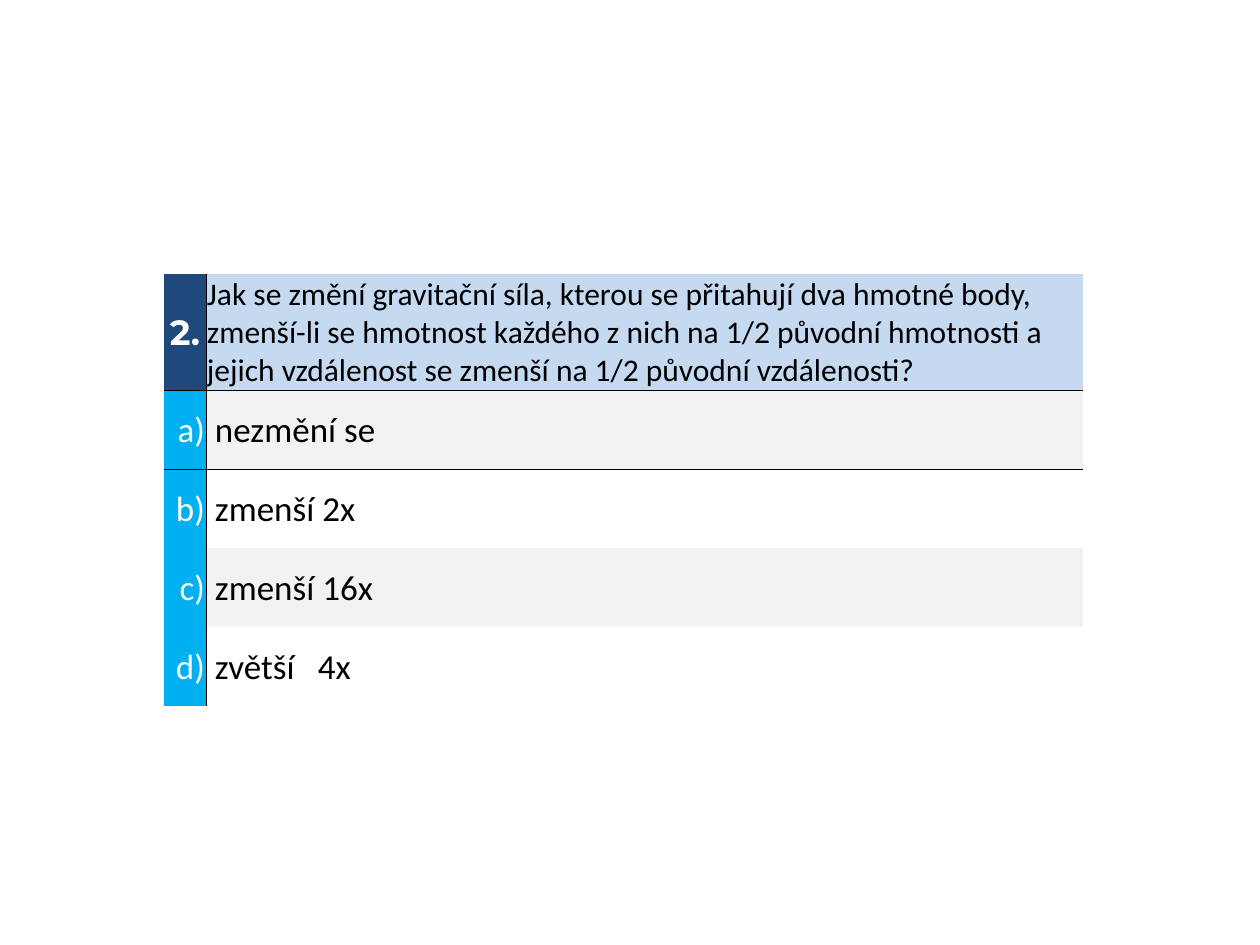
from lxml.etree import SubElement as Sub
from pptx import Presentation
from pptx.dml.color import RGBColor as Rgb
from pptx.enum.text import MSO_ANCHOR as Anchor, PP_ALIGN as Align
from pptx.oxml.ns import qn
from pptx.util import Pt

PX = 914400 // 126
THEME = {
    "navy": "1F497D", "pale": "C5D9F1", "cyan": "00B0F0", "gray": "F2F2F2",
    "white": "FFFFFF", "black": "000000",
    "body": "Calibri", "head": "Montserrat",
    "big": 20, "small": 18, "line": 0.5,
}


def border(cell, sides):
    """Draw thin lines on the given sides, in L, R, T, B order."""
    props = cell._tc.get_or_add_tcPr()
    for side in sides:
        line = Sub(props, qn("a:ln" + side), w=str(Pt(THEME["line"])))
        fill = Sub(line, qn("a:solidFill"))
        Sub(fill, qn("a:srgbClr"), val=THEME["black"])


def write(cell, text, ink, size, font, align, fill=None, bold=False, left=1, tab=0):
    """Fill one cell and format its text."""
    form = {"margin_left": left * PX, "margin_right": PX, "margin_top": PX,
            "margin_bottom": 0, "vertical_anchor": Anchor.MIDDLE}
    for key, val in form.items():
        setattr(cell, key, val)
    if fill:
        cell.fill.solid()
        cell.fill.fore_color.rgb = Rgb.from_string(THEME[fill])
    else:
        cell.fill.background()
    para = cell.text_frame.paragraphs[0]
    para.alignment = align
    if tab:
        stops = Sub(para._p.get_or_add_pPr(), qn("a:tabLst"))
        Sub(stops, qn("a:tab"), pos=str(tab * PX), algn="l")
    run = para.add_run()
    run.text = text
    for key, val in {"name": THEME[font], "size": Pt(THEME[size]), "bold": bold}.items():
        setattr(run.font, key, val)
    run.font.color.rgb = Rgb.from_string(THEME[ink])


deck = Presentation()
deck.slide_width, deck.slide_height = 1260 * PX, 945 * PX
slide = deck.slides.add_slide(deck.slide_layouts[6])

# Plain table grid
answers = ["nezmění se", "zmenší 2x", "zmenší 16x", "zvětší\t4x"]
widths = [42, 877]
heights = [116] + [79] * len(answers)
frame = slide.shapes.add_table(len(heights), 2, 164 * PX, 274 * PX,
                               sum(widths) * PX, sum(heights) * PX)
table = frame.table
for key in ("first_row", "horz_banding"):
    setattr(table, key, False)
style = table._tbl.tblPr.find(qn("a:tableStyleId"))
style.text = "{2D5ABB26-0587-4C30-8999-92F81FD0307C}"
for col, wide in zip(table.columns, widths):
    col.width = wide * PX
for row, high in zip(table.rows, heights):
    row.height = high * PX

# Line between the columns and line under the question
for num in range(len(heights)):
    edge = {0: "B", 1: "T"}.get(num, "")
    border(table.cell(num, 0), "R" + edge)
    border(table.cell(num, 1), "L" + edge)

# Question
write(table.cell(0, 0), "2.", "white", "big", "head", Align.CENTER, "navy", bold=True)
write(table.cell(0, 1),
      "Jak se změní gravitační síla, kterou se přitahují dva hmotné body, "
      "zmenší-li se hmotnost každého z nich na 1/2 původní hmotnosti a "
      "jejich vzdálenost se zmenší na 1/2 původní vzdálenosti?",
      "black", "small", "body", Align.LEFT, "pale")

# Answers, every other one shaded
for num, (mark, text) in enumerate(zip("abcd", answers), 1):
    write(table.cell(num, 0), mark + ")", "white", "big", "body", Align.RIGHT, "cyan")
    write(table.cell(num, 1), text, "black", "big", "body", Align.LEFT,
          "gray" if num % 2 else None, left=9, tab=103 if "\t" in text else 0)

deck.save("out.pptx")
